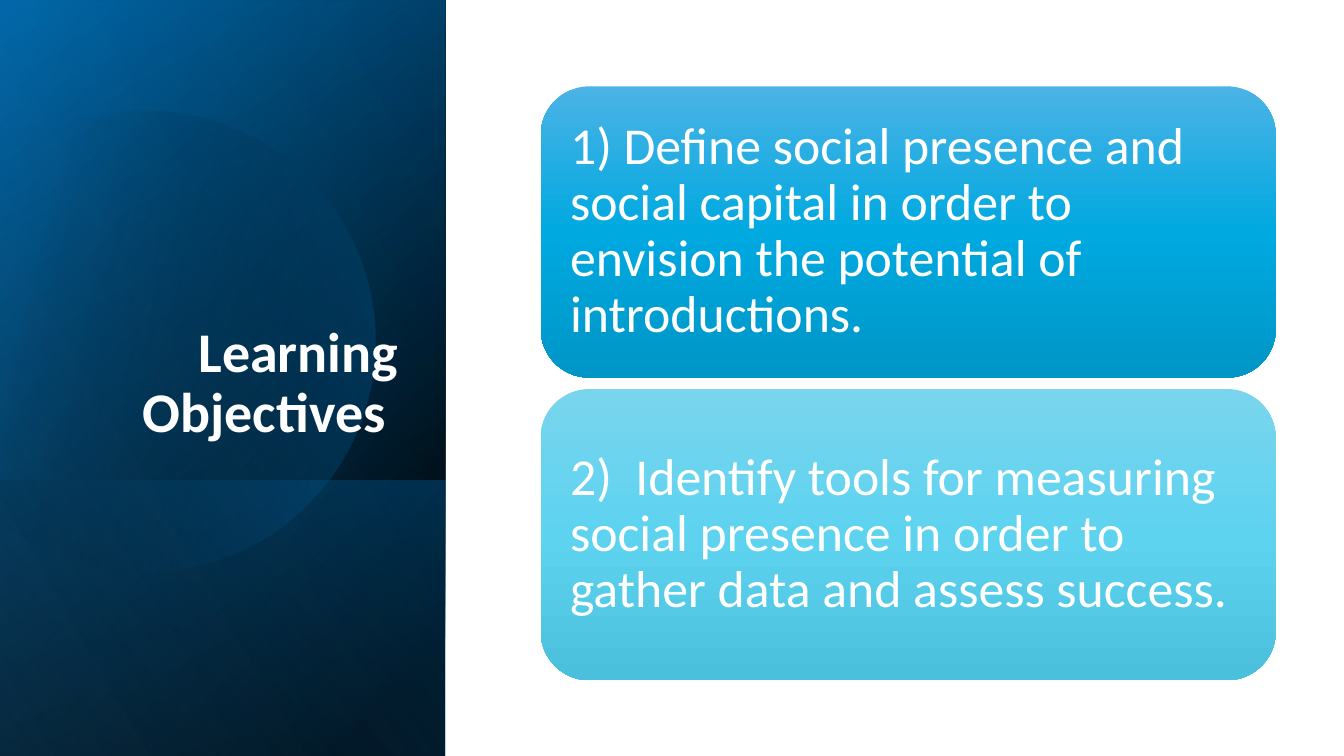
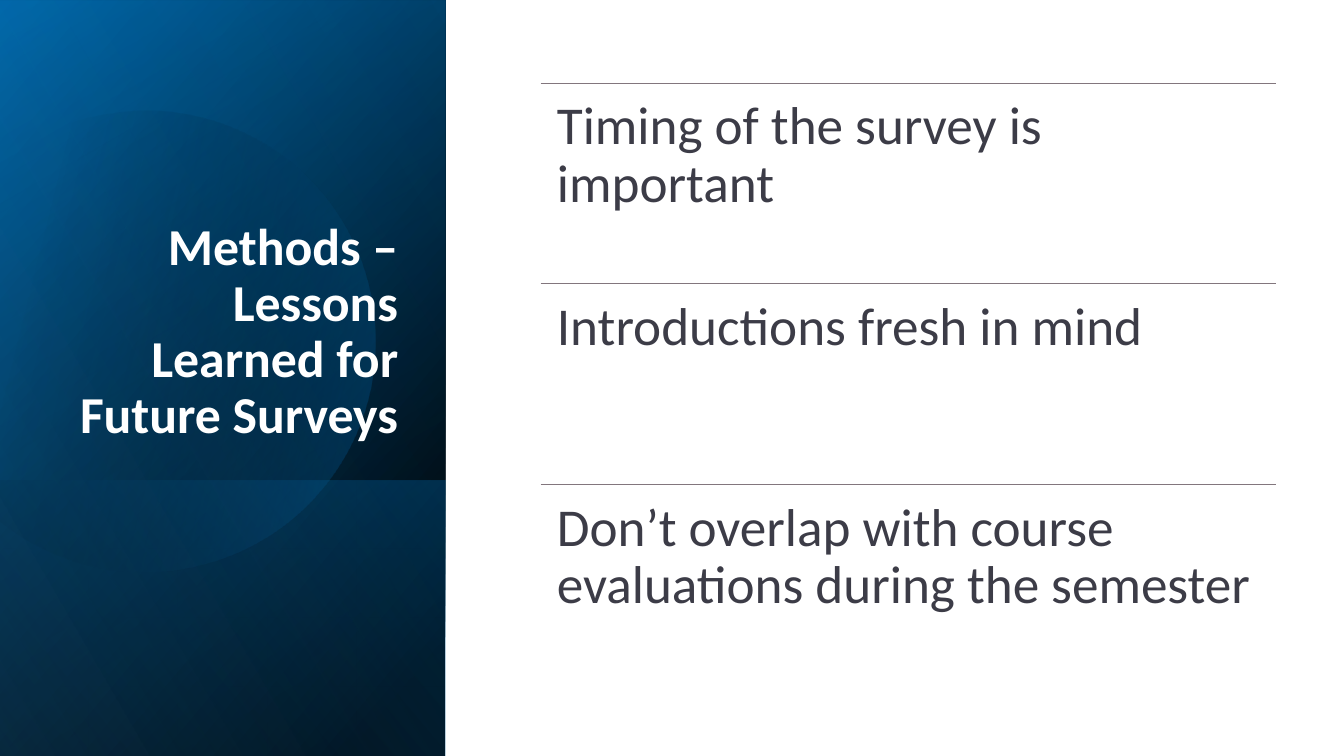
"""Build two training slides with a shaded title panel on the left."""
from dataclasses import dataclass
from math import cos, radians, sin
from typing import Optional

from pptx import Presentation
from pptx.dml.color import RGBColor
from pptx.enum.shapes import MSO_CONNECTOR, MSO_SHAPE
from pptx.enum.text import MSO_ANCHOR, PP_ALIGN
from pptx.oxml import parse_xml
from pptx.oxml.ns import nsdecls, qn
from pptx.util import Pt

RECT, ROUND = MSO_SHAPE.RECTANGLE, MSO_SHAPE.ROUNDED_RECTANGLE
LINE = MSO_CONNECTOR.STRAIGHT
TOP, MIDDLE, BOTTOM = MSO_ANCHOR.TOP, MSO_ANCHOR.MIDDLE, MSO_ANCHOR.BOTTOM
LEFT, RIGHT = PP_ALIGN.LEFT, PP_ALIGN.RIGHT

WHITE = RGBColor(0xFF, 0xFF, 0xFF)
BLACK = RGBColor(0x00, 0x00, 0x00)
NAVY = RGBColor(0x00, 0x5C, 0x96)
BLUE = RGBColor(0x00, 0x7A, 0xC8)
LIGHT = RGBColor(0x45, 0xB6, 0xFF)
INK = RGBColor(0x3C, 0x3C, 0x47)
GREY = RGBColor(0x82, 0x76, 0x7D)
SKY = (RGBColor(0x4B, 0xB3, 0xE6), RGBColor(0x00, 0xA9, 0xE0), RGBColor(0x00, 0x96, 0xC7))
AQUA = (RGBColor(0x79, 0xD5, 0xED), RGBColor(0x5D, 0xD3, 0xF0), RGBColor(0x4B, 0xC0, 0xDD))

FONT = "Calibri"
WIDE, HIGH = 960, 540
SIDE = 318
BODY_X, BODY_W = 386.25, 525
CARD_Y, CARD_H, CARD_GAP = 61.7, 208, 8.2
ROW_Y, ROW_H = 59.2, 143.25


@dataclass(frozen=True)
class Stop:
    """One gradient stop; place and alpha are percentages."""
    place: int
    color: RGBColor
    alpha: int = 100


@dataclass(frozen=True)
class Shade:
    """A linear gradient."""
    angle: int
    stops: tuple[Stop, ...]


@dataclass(frozen=True)
class Panel:
    """A turned rectangle that fills the side from top to the slide's foot."""
    top: float
    shade: Shade


@dataclass(frozen=True)
class Card:
    """A rounded box of text."""
    text: str
    colors: tuple[RGBColor, ...]


BACK = (
    Panel(0, Shade(50, (Stop(8, BLACK), Stop(100, NAVY)))),
    Panel(0.5, Shade(30, (Stop(0, BLACK, 0), Stop(99, BLUE, 46)))),
    Panel(343, Shade(130, (Stop(2, BLUE, 29), Stop(100, BLACK, 30)))),
)
FRONT = Panel(0, Shade(120, (Stop(0, BLACK, 0), Stop(99, LIGHT, 11))))
GLOW = Shade(30, (Stop(29, BLACK, 0), Stop(100, BLUE, 43)))
DISC_X, DISC_Y, DISC_W, DISC_H = -39.6, 76.3, 307.4, 329
TILT = 16.1
DISC = (
    ("moveTo", ((107.3, 79.2),)),
    ("cubicBezTo", ((177.1, 80.6), (241.2, 127.4), (261.4, 198))),
    ("cubicBezTo", ((286.6, 285.8), (236.2, 376.6), (149, 401.8))),
    ("cubicBezTo", ((94.3, 417.6), (38.2, 403.9), (-2.2, 370.1))),
    ("lnTo", ((-10.8, 362.2),)),
    ("lnTo", ((-10.8, 126),)),
    ("lnTo", ((0, 115.9),)),
    ("cubicBezTo", ((16.6, 102.2), (36, 92.2), (57.6, 85.7))),
    ("cubicBezTo", ((74.2, 81.4), (90.7, 79.2), (107.3, 79.2))),
)
CARDS = (
    Card("1) Define social presence and social capital in order to envision "
         "the potential of introductions.", SKY),
    Card("2)  Identify tools for measuring social presence in order to "
         "gather data and assess success.", AQUA),
)
ROWS = (
    "Timing of the survey is important",
    "Introductions fresh in mind",
    "Don’t overlap with course evaluations during the semester",
)


def paint(shape, shade: Shade) -> None:
    """Fill a shape with a gradient and clear its line and shadow."""
    shape.shadow.inherit = False
    shape.line.fill.background()
    shape.fill.background()
    stops = "".join(
        f'<a:gs pos="{stop.place * 1000}"><a:srgbClr val="{stop.color}">'
        f'<a:alpha val="{stop.alpha * 1000}"/></a:srgbClr></a:gs>'
        for stop in shade.stops)
    fill = parse_xml(
        f'<a:gradFill {nsdecls("a")} rotWithShape="1"><a:gsLst>{stops}</a:gsLst>'
        f'<a:lin ang="{shade.angle * 60000}" scaled="0"/></a:gradFill>')
    props = shape._element.spPr
    props.replace(props.find(qn("a:noFill")), fill)


def write(shape, text: str, *, size: float, color: RGBColor = WHITE,
          bold: bool = False, align: PP_ALIGN = LEFT,
          anchor: MSO_ANCHOR = TOP, inset: Optional[float] = None) -> None:
    """Put formatted text into a shape."""
    frame = shape.text_frame
    frame.word_wrap = True
    frame.vertical_anchor = anchor
    if inset is not None:
        frame.margin_left = frame.margin_right = Pt(inset)
        frame.margin_top = frame.margin_bottom = Pt(inset)
    para = frame.paragraphs[0]
    para.alignment = align
    para.line_spacing = 0.9
    run = para.add_run()
    run.text = text
    font = run.font
    font.name, font.size, font.bold = FONT, Pt(size), bold
    font.color.rgb = color


def draw_panel(slide, panel: Panel) -> None:
    """Draw one turned and mirrored layer of the side."""
    span = HIGH - panel.top
    shape = slide.shapes.add_shape(
        RECT, Pt((SIDE - span) / 2), Pt(panel.top + (span - SIDE) / 2),
        Pt(span), Pt(SIDE))
    shape.rotation = 90
    shape._element.spPr.find(qn("a:xfrm")).set("flipH", "1")
    paint(shape, panel.shade)


def turn(point: tuple[float, float]) -> tuple[int, int]:
    """Map a slide point into the tilted box of the disc."""
    x = point[0] - DISC_X - DISC_W / 2
    y = point[1] - DISC_Y - DISC_H / 2
    c, s = cos(radians(TILT)), sin(radians(TILT))
    return Pt(x * c - y * s + DISC_W / 2), Pt(x * s + y * c + DISC_H / 2)


def draw_disc(slide) -> None:
    """Draw the glowing disc with true curves."""
    steps = [(kind, [turn(point) for point in points]) for kind, points in DISC]
    ends = [points[-1] for _, points in steps]
    form = slide.shapes.build_freeform(*ends[0])
    form.add_line_segments(ends[1:], close=True)
    shape = form.convert_to_shape()
    shape.left, shape.top = Pt(DISC_X), Pt(DISC_Y)
    shape.width, shape.height = Pt(DISC_W), Pt(DISC_H)
    shape.rotation = 360 - TILT
    body = "".join(
        f"<a:{kind}>" + "".join(f'<a:pt x="{x}" y="{y}"/>' for x, y in points)
        + f"</a:{kind}>" for kind, points in steps)
    trace = parse_xml(
        f'<a:path {nsdecls("a")} w="{Pt(DISC_W)}" h="{Pt(DISC_H)}">'
        f'{body}<a:close/></a:path>')
    paths = shape._element.spPr.find(qn("a:custGeom")).find(qn("a:pathLst"))
    paths.replace(paths[0], trace)
    paint(shape, GLOW)


def add_slide(deck, title: str, size: float):
    """Add a slide with the side and its title."""
    slide = deck.slides.add_slide(deck.slide_layouts[6])
    for panel in BACK:
        draw_panel(slide, panel)
    draw_disc(slide)
    draw_panel(slide, FRONT)
    box = slide.shapes.add_textbox(Pt(46), Pt(132.5), Pt(245.5), Pt(188.7))
    write(box, title, size=size, bold=True, align=RIGHT, anchor=BOTTOM)
    return slide


def draw_card(slide, card: Card, top: float) -> None:
    """Draw one rounded card."""
    shape = slide.shapes.add_shape(ROUND, Pt(BODY_X), Pt(top), Pt(BODY_W), Pt(CARD_H))
    stops = tuple(Stop(50 * n, color) for n, color in enumerate(card.colors))
    paint(shape, Shade(90, stops))
    write(shape, card.text, size=37, anchor=MIDDLE, inset=10.8)


def draw_row(slide, text: str, top: float) -> None:
    """Draw one ruled row of text."""
    rule = slide.shapes.add_connector(
        LINE, Pt(BODY_X), Pt(top), Pt(BODY_X + BODY_W), Pt(top))
    rule.line.color.rgb = GREY
    rule.line.width = Pt(0.5)
    rule._element.spPr.append(parse_xml(f'<a:effectLst {nsdecls("a")}/>'))
    box = slide.shapes.add_textbox(Pt(BODY_X), Pt(top), Pt(BODY_W), Pt(ROW_H))
    write(box, text, size=38, color=INK, inset=11.5)


def main() -> None:
    """Build and save the deck."""
    deck = Presentation()
    deck.slide_width, deck.slide_height = Pt(WIDE), Pt(HIGH)
    goals = add_slide(deck, "Learning Objectives ", 40)
    for n, card in enumerate(CARDS):
        draw_card(goals, card, CARD_Y + n * (CARD_H + CARD_GAP))
    tips = add_slide(deck, "Methods – Lessons Learned for Future Surveys ", 37)
    for n, text in enumerate(ROWS):
        draw_row(tips, text, ROW_Y + n * ROW_H)
    deck.save("out.pptx")


if __name__ == "__main__":
    main()
